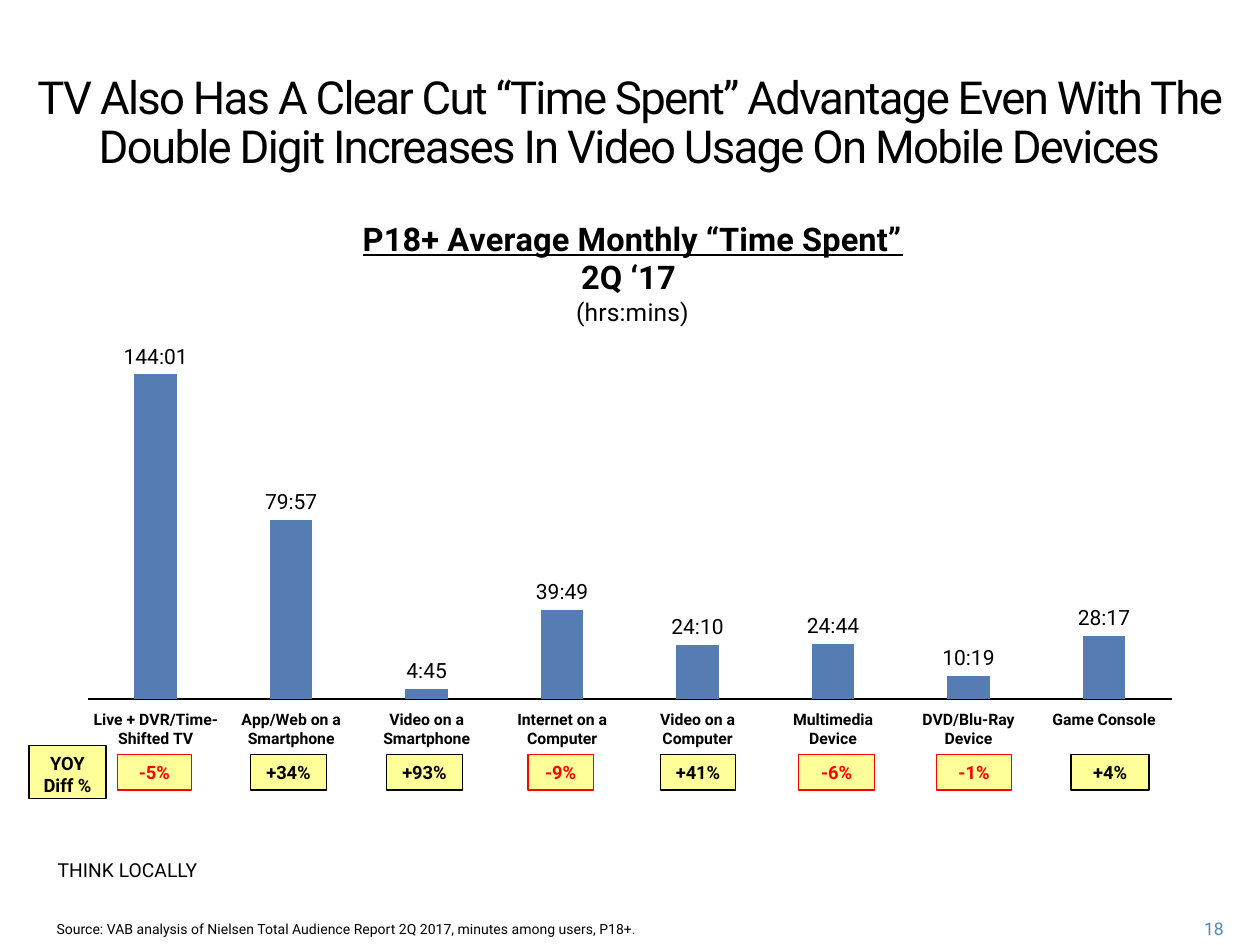
from typing import NamedTuple

from lxml import etree
from pptx import Presentation
from pptx.chart.data import CategoryChartData
from pptx.dml.color import RGBColor
from pptx.enum.chart import XL_CHART_TYPE as ChartType
from pptx.enum.chart import XL_LABEL_POSITION as LabelPosition
from pptx.enum.chart import XL_TICK_LABEL_POSITION as TickLabels
from pptx.enum.chart import XL_TICK_MARK as TickMark
from pptx.enum.shapes import MSO_SHAPE as Shape
from pptx.enum.text import MSO_ANCHOR as Anchor
from pptx.enum.text import PP_ALIGN as Align
from pptx.oxml.ns import qn
from pptx.util import Pt

FONT = "Roboto"
BLACK = RGBColor(0, 0, 0)
RED = RGBColor(0xFF, 0, 0)
YELLOW = RGBColor(0xFF, 0xFF, 0x99)
BAR_BLUE = RGBColor(0x56, 0x7C, 0xB4)
PAGE_BLUE = RGBColor(0x50, 0x8A, 0xBA)


class Box(NamedTuple):
    left: float
    top: float
    width: float
    height: float

    def lengths(self) -> list:
        return [Pt(value) for value in self]


class Device(NamedTuple):
    name: str
    hours: float  # hours before the point, minutes after it
    change: str
    change_left: float
    change_width: float = 43.2


DEVICES = [
    Device("Live + DVR/Time-Shifted TV", 144.01, "-5%", 67, 42.5),
    Device("App/Web on a Smartphone", 79.57, "+34%", 143.3),
    Device("Video on a Smartphone", 4.45, "+93%", 221),
    Device("Internet on a Computer", 39.49, "-9%", 301.7, 37.4),
    Device("Video on a Computer", 24.10, "+41%", 377.3),
    Device("Multimedia Device", 24.44, "-6%", 456.5),
    Device("DVD/Blu-Ray Device", 10.19, "-1%", 535),
    Device("Game Console", 28.17, "+4%", 612, 44.6),
]


def style_font(font, size: float, color=BLACK, bold=False, underline=False) -> None:
    font.name = FONT
    font.size = Pt(size)
    font.bold = bold
    font.underline = underline
    font.color.rgb = color


def write(frame, text: str, *, size: float, color=BLACK, bold=False, align=Align.LEFT,
          anchor=Anchor.TOP, line_spacing=None, tracking=0) -> None:
    frame.word_wrap = True
    frame.vertical_anchor = anchor
    paragraph = frame.paragraphs[0]
    paragraph.alignment = align
    if line_spacing:
        paragraph.line_spacing = Pt(line_spacing)
    run = paragraph.add_run()
    run.text = text
    style_font(run.font, size, color, bold)
    if tracking:
        run.font._element.set("spc", str(tracking * 100))


def add_text(slide, box: Box, text: str, **text_format) -> None:
    write(slide.shapes.add_textbox(*box.lengths()).text_frame, text, **text_format)


def add_tag(slide, box: Box, text: str, color=BLACK) -> None:
    tag = slide.shapes.add_shape(Shape.RECTANGLE, *box.lengths())
    tag.shadow.inherit = False
    tag.fill.solid()
    tag.fill.fore_color.rgb = YELLOW
    tag.line.color.rgb = color
    tag.line.width = Pt(0.75)
    write(tag.text_frame, text, size=10.5, color=color, bold=True, align=Align.CENTER)


def place_in_chart(parent, **fractions: float) -> None:
    """Give a chart title or plot area a fixed place, as fractions of the chart."""
    layout = parent.find(qn("c:layout"))
    if layout is None:
        layout = etree.Element(qn("c:layout"))
        text = parent.find(qn("c:tx"))
        parent.insert(0 if text is None else 1, layout)
    manual = etree.SubElement(layout, qn("c:manualLayout"))
    if "w" in fractions:
        etree.SubElement(manual, qn("c:layoutTarget")).set("val", "inner")
    for side in ("x", "y"):
        etree.SubElement(manual, qn(f"c:{side}Mode")).set("val", "edge")
    for key, value in fractions.items():
        etree.SubElement(manual, qn(f"c:{key}")).set("val", str(value))


def add_chart_title(chart) -> None:
    frame = chart.chart_title.text_frame
    lines = [
        ("P18+ Average Monthly “Time Spent”", 18.6, True, True),
        ("2Q ‘17 ", 18.6, True, False),
        ("(hrs:mins)", 14, False, False),
    ]
    for index, (text, size, bold, underline) in enumerate(lines):
        paragraph = frame.add_paragraph() if index else frame.paragraphs[0]
        paragraph.alignment = Align.CENTER
        run = paragraph.add_run()
        run.text = text
        style_font(run.font, size, bold=bold, underline=underline)
    chart.chart_title.include_in_layout = False
    place_in_chart(chart.chart_title._element, x=0.26, y=0.04)


def add_time_chart(slide, box: Box) -> None:
    data = CategoryChartData(number_format="0.00")
    data.categories = [device.name for device in DEVICES]
    data.add_series("Series 1", [device.hours for device in DEVICES])
    chart = slide.shapes.add_chart(ChartType.COLUMN_CLUSTERED, *box.lengths(), data).chart
    chart.has_legend = False
    style_font(chart.font, 10)
    add_chart_title(chart)

    devices_axis = chart.category_axis
    devices_axis.major_tick_mark = TickMark.NONE
    devices_axis.tick_label_position = TickLabels.LOW
    devices_axis.format.line.color.rgb = BLACK
    devices_axis.format.line.width = Pt(0.75)
    style_font(devices_axis.tick_labels.font, 9, bold=True)
    hours_axis = chart.value_axis
    hours_axis.visible = False
    hours_axis.has_major_gridlines = False
    hours_axis.minimum_scale, hours_axis.maximum_scale = 0, 160

    plot = chart.plots[0]
    plot.gap_width, plot.overlap = 219, -27
    plot.vary_by_categories = False
    bars = plot.series[0]
    bars.format.fill.solid()
    bars.format.fill.fore_color.rgb = BAR_BLUE
    labels = bars.data_labels
    labels.show_value = True
    labels.number_format, labels.number_format_is_linked = "0.00", False
    labels.position = LabelPosition.OUTSIDE_END
    style_font(labels.font, 12)
    for index, device in enumerate(DEVICES):
        label = bars.points[index].data_label
        run = label.text_frame.paragraphs[0].add_run()
        run.text = f"{device.hours:.2f}".replace(".", ":")
        style_font(run.font, 12)
        label.position = LabelPosition.OUTSIDE_END
    place_in_chart(chart._chartSpace.chart.plotArea, x=0.02, y=0.26, w=0.96, h=0.645)


def main() -> None:
    deck = Presentation()
    deck.slide_width, deck.slide_height = Pt(720), Pt(540)
    slide = deck.slides.add_slide(deck.slide_layouts[6])

    add_text(slide, Box(662.4, 521.3, 43.9, 18), "18", size=10, color=PAGE_BLUE,
             align=Align.RIGHT, anchor=Anchor.MIDDLE)
    add_text(slide, Box(13, 38.9, 693.4, 36),
             "TV Also Has A Clear Cut “Time Spent” Advantage Even With The "
             "Double Digit Increases In Video Usage On Mobile Devices",
             size=26, align=Align.CENTER, line_spacing=28, tracking=-1)
    add_text(slide, Box(25.2, 521.3, 478.8, 18.7),
             "Source: VAB analysis of Nielsen Total Audience Report 2Q 2017, "
             "minutes among users, P18+.", size=8, anchor=Anchor.MIDDLE)
    add_time_chart(slide, Box(37.4, 110.2, 645.1, 319.7))
    add_tag(slide, Box(16.6, 426.2, 43.9, 30.2), "YOY Diff %")
    for device in DEVICES:
        color = RED if device.change.startswith("-") else BLACK
        add_tag(slide, Box(device.change_left, 431.3, device.change_width, 20.2),
                device.change, color)
    add_text(slide, Box(25.9, 486.7, 135.4, 33.8), "THINK LOCALLY", size=11)
    deck.save("out.pptx")


if __name__ == "__main__":
    main()
